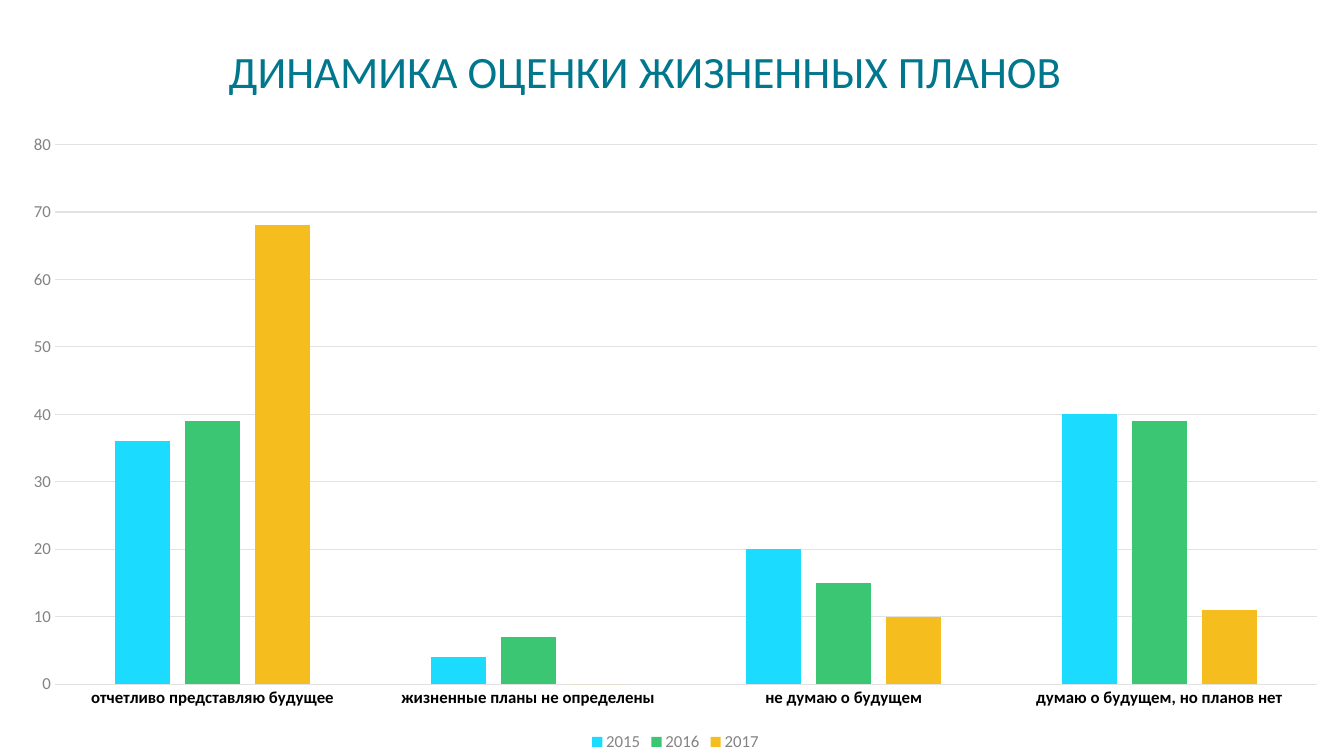
"""Build a slide with a clustered column chart of life-plan ratings by year."""
from dataclasses import dataclass

from pptx import Presentation
from pptx.chart.data import CategoryChartData as ChartData
from pptx.dml.color import RGBColor as RGB
from pptx.enum.chart import XL_CHART_TYPE as ChartType
from pptx.enum.chart import XL_LEGEND_POSITION as LegendPos
from pptx.enum.chart import XL_TICK_MARK as Tick
from pptx.enum.text import MSO_ANCHOR as Anchor
from pptx.util import Inches, Pt

FONT = "Calibri"
COLORS = {
    "title": "00778D",
    "text": "404040",
    "category": "000000",
    "muted": "838383",
    "grid": "E2E2E2",
    "cyan": "1BDCFF",
    "green": "3AC673",
    "yellow": "F6BD1E",
}
CATEGORIES = [
    "отчетливо представляю будущее",
    "жизненные планы не определены",
    "не думаю о будущем",
    "думаю о будущем, но планов нет",
]


@dataclass(frozen=True)
class YearSeries:
    name: str
    values: tuple[int, ...]
    color: str


YEARS = [
    YearSeries("2015", (36, 4, 20, 40), "cyan"),
    YearSeries("2016", (39, 7, 15, 39), "green"),
    YearSeries("2017", (68, 0, 10, 11), "yellow"),
]


def rgb(name: str) -> RGB:
    return RGB.from_string(COLORS[name])


def style_font(font, size: float, color: str, bold: bool = False) -> None:
    font.name, font.size, font.bold = FONT, Pt(size), bold
    font.color.rgb = rgb(color)


def style_line(line) -> None:
    line.color.rgb = rgb("grid")
    line.width = Pt(0.75)


def add_text(slide, text: str, *, left: float, top: float, width: float,
             height: float, size: float, color: str, spacing: float = 1) -> None:
    tf = slide.shapes.add_textbox(
        Inches(left), Inches(top), Inches(width), Inches(height)).text_frame
    tf.word_wrap = True
    tf.vertical_anchor = Anchor.BOTTOM
    p = tf.paragraphs[0]
    p.line_spacing = spacing
    r = p.add_run()
    r.text = text
    style_font(r.font, size, color)


def style_axes(chart) -> None:
    cat, val = chart.category_axis, chart.value_axis
    for axis in (cat, val):
        axis.major_tick_mark = axis.minor_tick_mark = Tick.NONE
    style_font(cat.tick_labels.font, 12, "category", bold=True)
    style_line(cat.format.line)
    style_font(val.tick_labels.font, 12, "muted")
    val.format.line.fill.background()
    val.minimum_scale, val.maximum_scale, val.major_unit = 0, 80, 10
    val.has_major_gridlines = True
    style_line(val.major_gridlines.format.line)


def add_column_chart(slide, years: list[YearSeries]) -> None:
    data = ChartData()
    data.categories = CATEGORIES
    for year in years:
        data.add_series(year.name, year.values)
    chart = slide.shapes.add_chart(
        ChartType.COLUMN_CLUSTERED, Inches(0.07), Inches(1.21),
        Inches(13.26), Inches(6.29), data).chart
    style_font(chart.font, 10, "text")
    chart.has_title = False
    chart.has_legend = True
    chart.legend.position = LegendPos.BOTTOM
    chart.legend.include_in_layout = False
    style_font(chart.legend.font, 12, "muted")
    style_axes(chart)
    plot = chart.plots[0]
    plot.gap_width, plot.overlap = 219, -27
    plot.vary_by_categories = False
    for series, year in zip(plot.series, years):
        series.format.fill.solid()
        series.format.fill.fore_color.rgb = rgb(year.color)


def main() -> None:
    prs = Presentation()
    prs.slide_width, prs.slide_height = Inches(13.33), Inches(7.5)
    slide = prs.slides.add_slide(prs.slide_layouts[6])
    add_text(slide, "ДИНАМИКА ОЦЕНКИ ЖИЗНЕННЫХ ПЛАНОВ", left=2.17, top=0.3,
             width=9, height=0.72, size=32, color="title", spacing=0.85)
    add_column_chart(slide, YEARS)
    prs.save("out.pptx")


if __name__ == "__main__":
    main()
